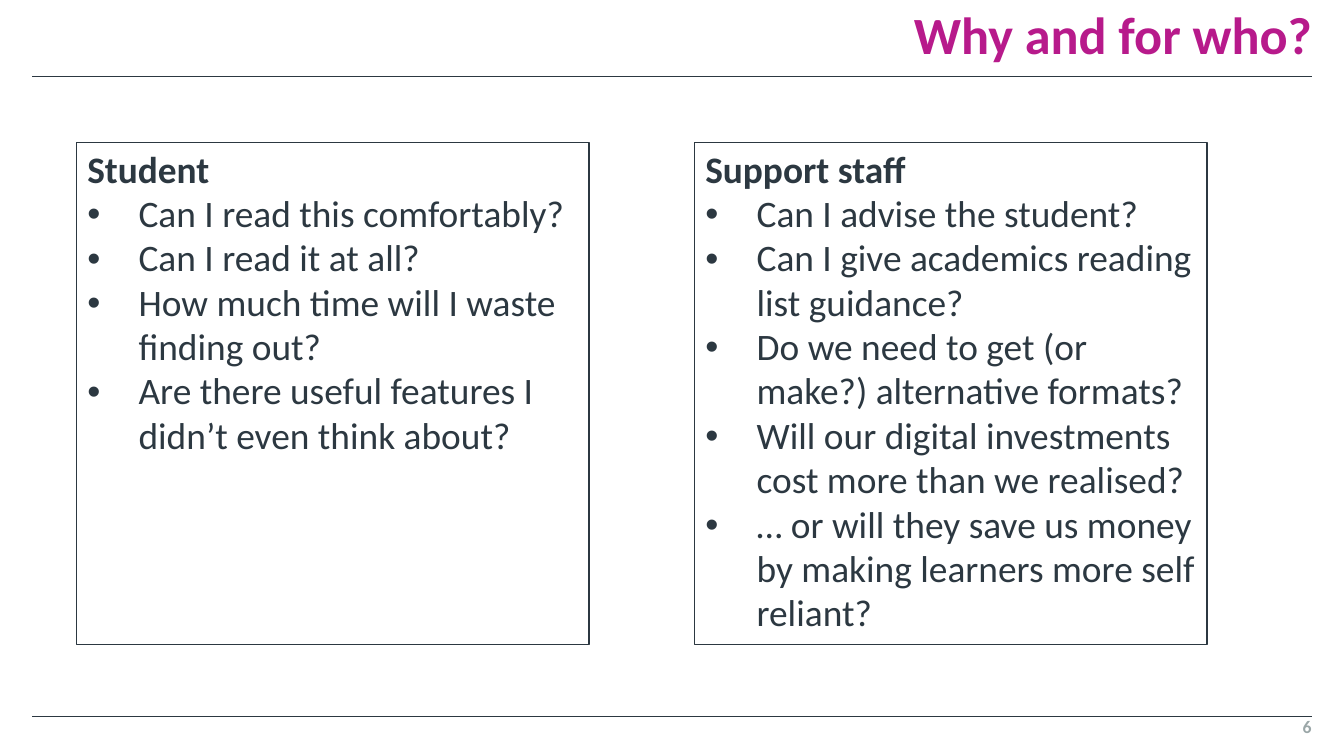
"""Build the slide that sets student questions beside support staff questions."""
from lxml import etree
from pptx import Presentation, util as u
from pptx.dml.color import RGBColor
from pptx.enum import shapes, text
from pptx.oxml import ns

DARK = RGBColor(0x2C, 0x38, 0x41)
PINK = RGBColor(0xB7, 0x1A, 0x8B)
GREY = RGBColor(0x9B, 0xA7, 0xA8)
FONT = "Calibri"

TITLE = "Why and for who?"
PAGE = "6"
CARDS = [
    ("Student", [
        "Can I read this comfortably?",
        "Can I read it at all?",
        "How much time will I waste finding out?",
        "Are there useful features I didn’t even think about?",
    ]),
    ("Support staff", [
        "Can I advise the student?",
        "Can I give academics reading list guidance?",
        "Do we need to get (or make?) alternative formats?",
        "Will our digital investments cost more than we realised?",
        "… or will they save us money by making learners more self reliant?",
    ]),
]

WIDE, HIGH = 25.4, 14.29
EDGE = 0.61
RULES = (1.45, 13.54)
LEFT, TOP, STEP = 1.45, 2.69, 11.68
CARD = (9.68, 9.5)
INDENT = 0.97


def place(shape, left, top, width, height):
    shape.left, shape.top = u.Cm(left), u.Cm(top)
    shape.width, shape.height = u.Cm(width), u.Cm(height)


def frame(shape, side, end, anchor):
    box = shape.text_frame
    box.word_wrap = True
    box.auto_size = text.MSO_AUTO_SIZE.NONE
    box.vertical_anchor = anchor
    box.margin_left = box.margin_right = u.Cm(side)
    box.margin_top = box.margin_bottom = u.Cm(end)
    return box


def style(para, size, color, bold, align, space):
    para.alignment = align
    para.line_spacing = space
    font = para.font
    font.name, font.size, font.bold = FONT, u.Pt(size), bold
    font.color.rgb = color


def bullet(para):
    props = para._p.get_or_add_pPr()
    props.set("marL", str(u.Cm(INDENT)))
    props.set("indent", str(u.Cm(-INDENT)))
    etree.SubElement(props, ns.qn("a:buFont"), typeface="Arial")
    etree.SubElement(props, ns.qn("a:buChar"), char="•")


def rule(slide, top):
    line = slide.shapes.add_connector(
        shapes.MSO_CONNECTOR.STRAIGHT,
        u.Cm(EDGE), u.Cm(top), u.Cm(WIDE - EDGE), u.Cm(top))
    line.line.color.rgb = DARK
    line.line.width = u.Pt(0.5)
    etree.SubElement(line._element.spPr, ns.qn("a:effectLst"))


def card(slide, left, head, items):
    shape = slide.shapes.add_shape(shapes.MSO_SHAPE.RECTANGLE, 0, 0, 0, 0)
    place(shape, left, TOP, *CARD)
    shape.shadow.inherit = False
    shape.fill.background()
    shape.line.color.rgb = DARK
    shape.line.width = u.Pt(0.75)
    box = frame(shape, 0.2, 0.1, text.MSO_ANCHOR.TOP)
    para = box.paragraphs[0]
    para.text = head
    style(para, 20, DARK, True, text.PP_ALIGN.LEFT, 0.99)
    for item in items:
        para = box.add_paragraph()
        para.text = item
        bullet(para)
        style(para, 20, DARK, False, text.PP_ALIGN.LEFT, 0.99)


def label(shape, words, size, color, anchor, space):
    box = frame(shape, 0, 0, anchor)
    box.text = words
    style(box.paragraphs[0], size, color, True, text.PP_ALIGN.RIGHT, space)


def main():
    deck = Presentation()
    deck.slide_width, deck.slide_height = u.Cm(WIDE), u.Cm(HIGH)
    slide = deck.slides.add_slide(deck.slide_layouts[5])
    for top in RULES:
        rule(slide, top)
    title = slide.shapes.title
    place(title, 7.7, 0, WIDE - EDGE - 7.7, 1.24)
    label(title, TITLE, 28, PINK, text.MSO_ANCHOR.BOTTOM, 0.9)
    page = slide.shapes.add_textbox(0, 0, 0, 0)
    place(page, WIDE - EDGE - 2, RULES[1], 2, 0.46)
    label(page, PAGE, 9.5, GREY, text.MSO_ANCHOR.TOP, 1.0)
    for spot, (head, items) in enumerate(CARDS):
        card(slide, LEFT + spot * STEP, head, items)
    deck.save("out.pptx")


if __name__ == "__main__":
    main()
